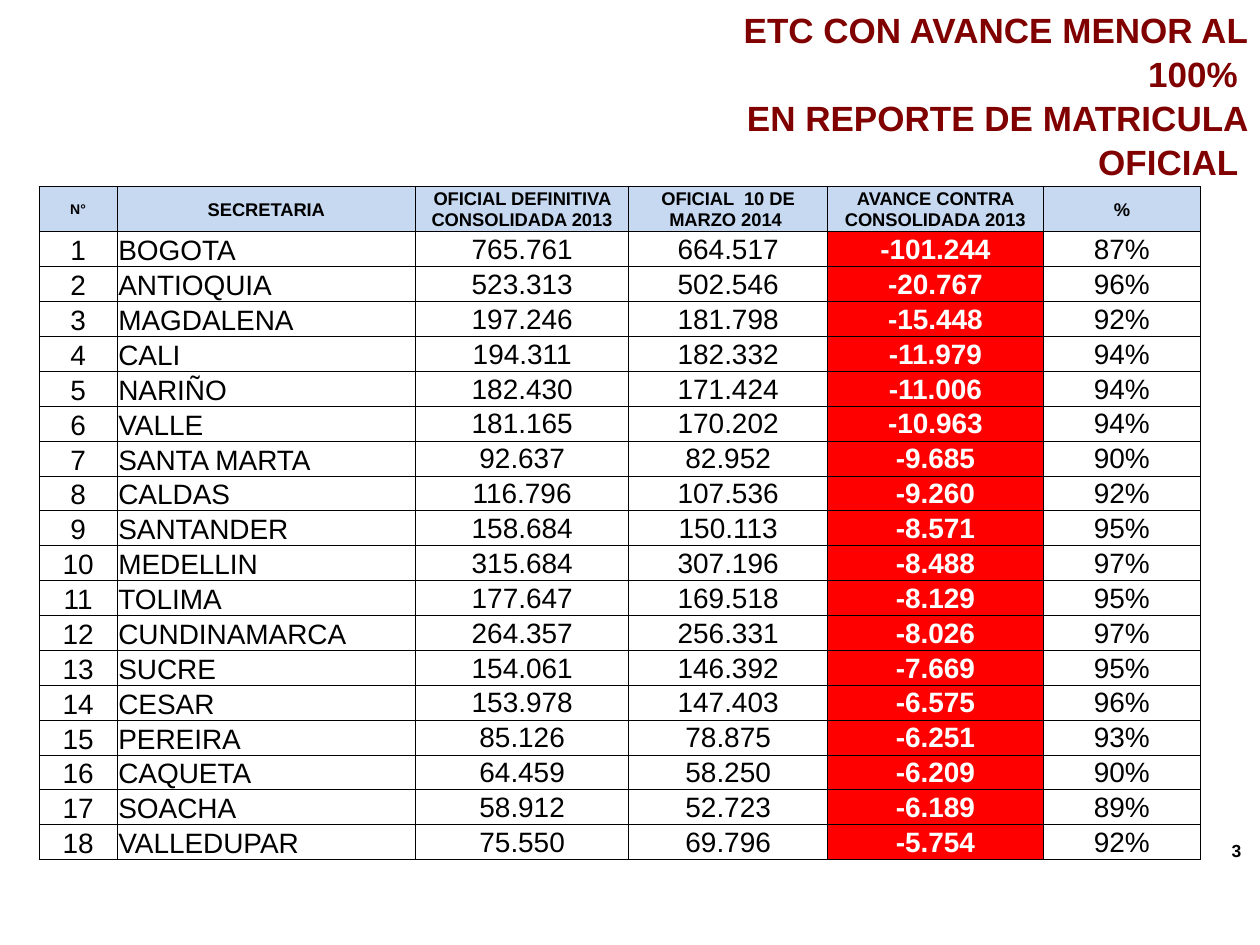
"""Build the slide listing education offices with enrolment reports below 100%."""
from dataclasses import dataclass

from lxml import etree
from pptx import Presentation
from pptx import util as u
from pptx.dml.color import RGBColor
from pptx.enum import text
from pptx.oxml import ns

PAGE_WIDTH, PAGE_HEIGHT = u.Inches(10), u.Inches(7.5)
COLOURS = {
    "ink": "000000",
    "title": "800000",
    "header": "C6D9F1",
    "alert": "FF0000",
    "paper": "FFFFFF",
}
FONT = "Arial"
COLUMN_INCHES = (0.62, 2.37, 1.69, 1.58, 1.71, 1.25)
HEADER_INCHES, ROW_INCHES = 0.36, 0.275
ALERT_COLUMN = 4
HEADINGS = (
    "N°",
    "SECRETARIA",
    "OFICIAL DEFINITIVA CONSOLIDADA 2013",
    "OFICIAL  10 DE MARZO 2014 ",
    "AVANCE CONTRA CONSOLIDADA 2013",
    "%",
)
OFFICES = (
    ("BOGOTA", "765.761", "664.517", "-101.244", "87%"),
    ("ANTIOQUIA", "523.313", "502.546", "-20.767", "96%"),
    ("MAGDALENA", "197.246", "181.798", "-15.448", "92%"),
    ("CALI", "194.311", "182.332", "-11.979", "94%"),
    ("NARIÑO", "182.430", "171.424", "-11.006", "94%"),
    ("VALLE", "181.165", "170.202", "-10.963", "94%"),
    ("SANTA MARTA", "92.637", "82.952", "-9.685", "90%"),
    ("CALDAS", "116.796", "107.536", "-9.260", "92%"),
    ("SANTANDER", "158.684", "150.113", "-8.571", "95%"),
    ("MEDELLIN", "315.684", "307.196", "-8.488", "97%"),
    ("TOLIMA", "177.647", "169.518", "-8.129", "95%"),
    ("CUNDINAMARCA", "264.357", "256.331", "-8.026", "97%"),
    ("SUCRE", "154.061", "146.392", "-7.669", "95%"),
    ("CESAR", "153.978", "147.403", "-6.575", "96%"),
    ("PEREIRA", "85.126", "78.875", "-6.251", "93%"),
    ("CAQUETA", "64.459", "58.250", "-6.209", "90%"),
    ("SOACHA", "58.912", "52.723", "-6.189", "89%"),
    ("VALLEDUPAR", "75.550", "69.796", "-5.754", "92%"),
)


@dataclass(frozen=True)
class Style:
    size: float
    colour: str = "ink"
    bold: bool = False
    align: text.PP_ALIGN = text.PP_ALIGN.CENTER
    anchor: text.MSO_ANCHOR = text.MSO_ANCHOR.MIDDLE
    fill: str | None = None
    spacing: float = 1.0


@dataclass(frozen=True)
class Caption:
    lines: tuple[str, ...]
    area: tuple[float, float, float, float]
    style: Style
    margins: dict[str, float]
    wrap: bool


CAPTIONS = (
    Caption(
        ("ETC CON AVANCE MENOR AL 100% ", "EN REPORTE DE MATRICULA OFICIAL "),
        (0.514, 0, 0.486, 1.45 / 7.5),
        Style(20, "title", True, text.PP_ALIGN.RIGHT, text.MSO_ANCHOR.TOP, spacing=1.05),
        {"left": 0.1, "top": 0.05, "right": 0.1, "bottom": 0.05},
        True,
    ),
    Caption(
        ("3 ",),
        (0.967, 6.74 / 7.5, 0.022, 0.17 / 7.5),
        Style(10, bold=True, align=text.PP_ALIGN.RIGHT, anchor=text.MSO_ANCHOR.BOTTOM),
        {"left": 0, "top": 0, "right": 0, "bottom": 0.08},
        True,
    ),
)


def rgb(name: str) -> RGBColor:
    return RGBColor.from_string(COLOURS[name])


def apply(target, values: dict) -> None:
    for name, value in values.items():
        setattr(target, name, value)


def write(para, line: str, style: Style) -> None:
    apply(para, {"alignment": style.align, "line_spacing": style.spacing})
    span = para.add_run()
    span.text = line
    apply(span.font, {"name": FONT, "size": u.Pt(style.size), "bold": style.bold})
    span.font.color.rgb = rgb(style.colour)


def margins_of(sides: dict[str, float]) -> dict:
    return {f"margin_{side}": u.Inches(inset) for side, inset in sides.items()}


def draw_caption(page, caption: Caption) -> None:
    left, top, width, height = caption.area
    box = page.shapes.add_textbox(
        int(left * PAGE_WIDTH), int(top * PAGE_HEIGHT),
        int(width * PAGE_WIDTH), int(height * PAGE_HEIGHT),
    )
    frame = box.text_frame
    apply(frame, {
        "word_wrap": caption.wrap,
        "vertical_anchor": caption.style.anchor,
        **margins_of(caption.margins),
    })
    for index, line in enumerate(caption.lines):
        para = frame.add_paragraph() if index else frame.paragraphs[0]
        write(para, line, caption.style)


def draw_borders(cell) -> None:
    properties = cell._tc.get_or_add_tcPr()
    for index, side in enumerate(("lnL", "lnR", "lnT", "lnB")):
        line = etree.Element(ns.qn(f"a:{side}"), w=str(u.Pt(0.5)))
        fill = etree.SubElement(line, ns.qn("a:solidFill"))
        etree.SubElement(fill, ns.qn("a:srgbClr"), val=COLOURS["ink"])
        properties.insert(index, line)


def style_for(row: int, column: int) -> Style:
    if row == 0:
        return Style(10.5 if column else 8, bold=True, fill="header")
    if column == ALERT_COLUMN:
        return Style(16, "paper", True, fill="alert")
    if column < 2:
        align = text.PP_ALIGN.LEFT if column else text.PP_ALIGN.CENTER
        return Style(16, align=align, anchor=text.MSO_ANCHOR.BOTTOM)
    return Style(16)


def draw_cell(cell, words: str, style: Style) -> None:
    insets = {"left": 0.01, "top": 0.01, "right": 0.01, "bottom": 0}
    apply(cell, {"vertical_anchor": style.anchor, **margins_of(insets)})
    write(cell.text_frame.paragraphs[0], words, style)
    if style.fill:
        cell.fill.solid()
        cell.fill.fore_color.rgb = rgb(style.fill)
    else:
        cell.fill.background()
    draw_borders(cell)


def draw_table(page) -> None:
    records = [HEADINGS, *((str(n), *office) for n, office in enumerate(OFFICES, 1))]
    heights = [HEADER_INCHES] + [ROW_INCHES] * len(OFFICES)
    table = page.shapes.add_table(
        len(records), len(HEADINGS),
        int(0.031 * PAGE_WIDTH), int(1.48 / 7.5 * PAGE_HEIGHT),
        u.Inches(sum(COLUMN_INCHES)), u.Inches(sum(heights)),
    ).table
    apply(table, {"first_row": False, "horz_banding": False})
    for column, width in zip(table.columns, COLUMN_INCHES):
        column.width = u.Inches(width)
    for row, (record, height) in enumerate(zip(records, heights)):
        table.rows[row].height = u.Inches(height)
        for column, words in enumerate(record):
            draw_cell(table.cell(row, column), words, style_for(row, column))


def main() -> None:
    deck = Presentation()
    apply(deck, {"slide_width": PAGE_WIDTH, "slide_height": PAGE_HEIGHT})
    page = deck.slides.add_slide(deck.slide_layouts[6])
    for caption in CAPTIONS:
        draw_caption(page, caption)
    draw_table(page)
    deck.save("out.pptx")


if __name__ == "__main__":
    main()
